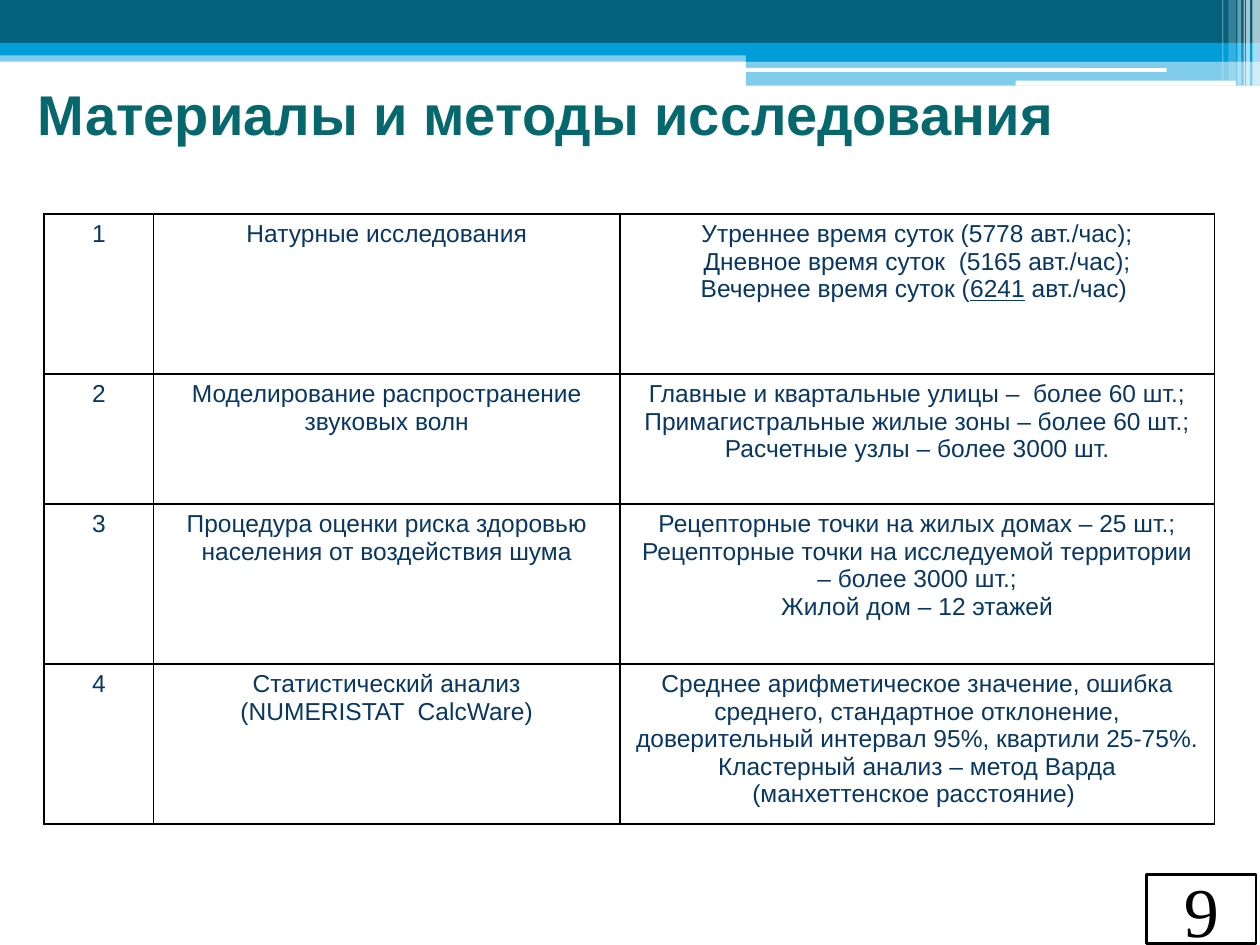
from dataclasses import dataclass

from lxml import etree
from pptx import Presentation
from pptx.dml.color import RGBColor
from pptx.enum import shapes, text
from pptx.oxml import ns
from pptx.util import Inches, Pt


@dataclass(frozen=True)
class Theme:
    band: str = "04617B"
    accent: str = "009DD9"
    white: str = "FFFFFF"
    black: str = "000000"
    title: str = "06686C"
    body: str = "083763"
    font: str = "Arial"
    number_font: str = "Times New Roman"
    title_size: int = 32
    body_size: int = 14
    number_size: int = 40


theme = Theme()


def add_box(page, kind, place, color, opacity=100):
    box = page.shapes.add_shape(kind, *[Inches(length) for length in place])
    box.shadow.inherit = False
    box.line.fill.background()
    box.fill.solid()
    box.fill.fore_color.rgb = RGBColor.from_string(color)
    if opacity < 100:
        tint = box.fill._xPr.find(".//" + ns.qn("a:srgbClr"))
        etree.SubElement(tint, ns.qn("a:alpha"), val=str(opacity * 1000))
    return box


def format_para(para, font, size, color, bold=False):
    for span in para.runs:
        span.font.name = font
        span.font.size = Pt(size)
        span.font.bold = bold
        span.font.color.rgb = RGBColor.from_string(color)


deck = Presentation()
deck.slide_width, deck.slide_height = Inches(10), Inches(7.5)
page = deck.slides.add_slide(deck.slide_layouts[5])

rectangle = shapes.MSO_SHAPE.RECTANGLE
bands = [
    ((0, 0.4, 10, 0.09), theme.accent, 50),
    ((0, 0, 10, 0.34), theme.band, 100),
    ((0, 0.34, 10, 0.1), theme.accent, 100),
    ((5.92, 0.39, 4.08, 0.1), theme.accent, 100),
    ((5.92, 0.48, 4.08, 0.2), theme.accent, 50),
]
for place, color, opacity in bands:
    add_box(page, rectangle, place, color, opacity)

for place in [(5.91, 0.54, 3.35, 0.03), (8.06, 0.64, 1.75, 0.04)]:
    add_box(page, shapes.MSO_SHAPE.ROUNDED_RECTANGLE, place, theme.white)

stripes = [
    (9.94, 0.06, 0.68, 65),
    (9.89, 0.03, 0.68, 65),
    (9.87, 0.01, 0.68, 60),
    (9.82, 0.03, 0.68, 40),
    (9.75, 0.06, 0.64, 20),
    (9.7, 0.01, 0.64, 30),
]
for left, width, height, opacity in stripes:
    add_box(page, rectangle, (left, 0, width, height), theme.white, opacity)

title = page.shapes.title
title.left, title.top = Inches(0.2), Inches(0.58)
title.width, title.height = Inches(9.29), Inches(0.64)
title.text_frame.text = "Материалы и методы исследования"
title.text_frame.auto_size = text.MSO_AUTO_SIZE.NONE
title.text_frame.vertical_anchor = text.MSO_ANCHOR.MIDDLE
heading = title.text_frame.paragraphs[0]
heading.alignment = text.PP_ALIGN.LEFT
format_para(heading, theme.font, theme.title_size, theme.title, bold=True)

methods = [
    (["Натурные исследования"],
     ["Утреннее время суток (5778 авт./час);",
      "Дневное время суток  (5165 авт./час);",
      "Вечернее время суток (|6241| авт./час) "]),
    (["Моделирование распространение звуковых волн"],
     ["Главные и квартальные улицы –  более 60 шт.;",
      "Примагистральные жилые зоны – более 60 шт.;",
      "Расчетные узлы – более 3000 шт."]),
    (["Процедура оценки риска здоровью населения от воздействия шума"],
     ["Рецепторные точки на жилых домах – 25 шт.;",
      "Рецепторные точки на исследуемой территории – более 3000 шт.;",
      "Жилой дом – 12 этажей"]),
    (["Статистический анализ", "(NUMERISTAT  CalcWare)"],
     ["Среднее арифметическое значение, ошибка среднего, стандартное отклонение, "
      "доверительный интервал 95%, квартили 25-75%.",
      "Кластерный анализ – метод Варда (манхеттенское расстояние) "]),
]
column_widths = [0.87, 3.7, 4.72]
row_heights = [1.27, 1.03, 1.27, 1.27]
table = page.shapes.add_table(
    len(methods), len(column_widths), Inches(0.35), Inches(1.7),
    Inches(sum(column_widths)), Inches(sum(row_heights))).table
table.first_row = table.horz_banding = False
for column, width in zip(table.columns, column_widths):
    column.width = Inches(width)
for row, height in zip(table.rows, row_heights):
    row.height = Inches(height)

for number, (method, details) in enumerate(methods, 1):
    for cell, lines in zip(table.rows[number - 1].cells, ([str(number)], method, details)):
        properties = cell._tc.get_or_add_tcPr()
        for side in ("lnL", "lnR", "lnT", "lnB"):
            border = etree.SubElement(properties, ns.qn("a:" + side), w=str(Pt(1)))
            fill = etree.SubElement(border, ns.qn("a:solidFill"))
            etree.SubElement(fill, ns.qn("a:srgbClr"), val=theme.black)
        cell.fill.background()
        cell.text_frame.text = "\n".join(lines).replace("|", "")
        for para, line in zip(cell.text_frame.paragraphs, lines):
            para.alignment = text.PP_ALIGN.CENTER
            if "|" in line:
                para.clear()
                for index, part in enumerate(line.split("|")):
                    span = para.add_run()
                    span.text = part
                    span.font.underline = index == 1
            format_para(para, theme.font, theme.body_size, theme.body)

number_box = add_box(page, rectangle, (9.1, 6.94, 0.87, 0.55), theme.white)
number_box.line.color.rgb = RGBColor.from_string(theme.black)
number_box.line.width = Pt(1.5)
number_box.text_frame.text = "9"
number_box.text_frame.vertical_anchor = text.MSO_ANCHOR.MIDDLE
page_number = number_box.text_frame.paragraphs[0]
page_number.alignment = text.PP_ALIGN.CENTER
format_para(page_number, theme.number_font, theme.number_size, theme.black)

deck.save("out.pptx")
